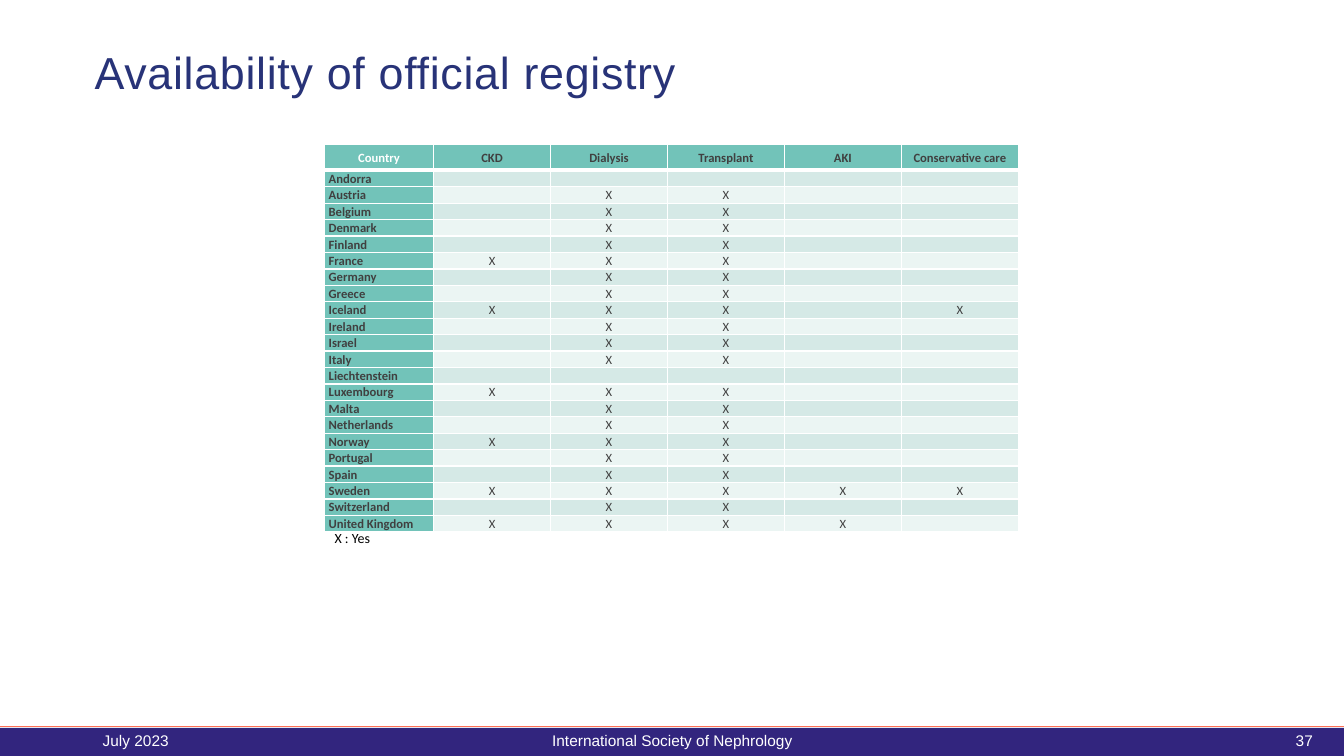
import pptx
import pptx.dml.color
import pptx.enum.shapes
import pptx.enum.text
import pptx.oxml.ns
import pptx.util
from lxml import etree

RGBColor = pptx.dml.color.RGBColor
Align = pptx.enum.text.PP_ALIGN
Anchor = pptx.enum.text.MSO_ANCHOR
Pt = pptx.util.Pt
qn = pptx.oxml.ns.qn

WHITE = RGBColor(0xFF, 0xFF, 0xFF)
BLACK = RGBColor(0x00, 0x00, 0x00)
CHARCOAL = RGBColor(0x40, 0x40, 0x40)
NAVY = RGBColor(0x28, 0x33, 0x78)
INDIGO = RGBColor(0x32, 0x25, 0x7E)
CORAL = RGBColor(0xFE, 0x70, 0x55)
TEAL = RGBColor(0x72, 0xC3, 0xB9)
BANDS = (RGBColor(0xD5, 0xE9, 0xE6), RGBColor(0xEB, 0xF5, 0xF3))

PAGE_WIDTH, PAGE_HEIGHT = 1333, 750
HEADER_HEIGHT, ROW_HEIGHT = 26, 16
COUNTRY_WIDTH, REGISTRY_WIDTH = 108, 116

REGISTRIES = ["CKD", "Dialysis", "Transplant", "AKI", "Conservative care"]
USUAL = ("Dialysis", "Transplant")
COUNTRIES = [
    "Andorra", "Austria", "Belgium", "Denmark", "Finland", "France", "Germany",
    "Greece", "Iceland", "Ireland", "Israel", "Italy", "Liechtenstein",
    "Luxembourg", "Malta", "Netherlands", "Norway", "Portugal", "Spain",
    "Sweden", "Switzerland", "United Kingdom",
]
# Countries whose registries differ from the usual pair
EXCEPTIONS = {
    "Andorra": (),
    "Liechtenstein": (),
    "France": ("CKD", *USUAL),
    "Iceland": ("CKD", *USUAL, "Conservative care"),
    "Luxembourg": ("CKD", *USUAL),
    "Norway": ("CKD", *USUAL),
    "Sweden": REGISTRIES,
    "United Kingdom": ("CKD", *USUAL, "AKI"),
}


def px(length):
    return pptx.util.Emu(length * 9144)


def add_text(page, box, text, size, font, color, align=Align.LEFT, anchor=Anchor.MIDDLE):
    frame = page.shapes.add_textbox(*map(px, box)).text_frame
    frame.word_wrap = True
    frame.vertical_anchor = anchor
    frame.text = text
    para = frame.paragraphs[0]
    para.alignment = align
    span = para.runs[0]
    span.font.size = Pt(size)
    span.font.name = font
    span.font.color.rgb = color
    return para


def add_title(page, box):
    para = add_text(page, box, "Availability of official registry", 32, "Arial", NAVY)
    para.line_spacing = 0.9
    para.runs[0].font._element.set("spc", "50")


def set_borders(cell, top, bottom):
    properties = cell._tc.get_or_add_tcPr()
    widths = {"lnL": 1, "lnR": 1, "lnT": top, "lnB": bottom}
    for position, (side, width) in enumerate(widths.items()):
        line = etree.Element(qn(f"a:{side}"), w=str(Pt(width)))
        fill = etree.SubElement(line, qn("a:solidFill"))
        etree.SubElement(fill, qn("a:srgbClr"), val=str(WHITE))
        properties.insert(position, line)


def fill_cell(cell, text, fill, color, bold, align):
    cell.fill.solid()
    cell.fill.fore_color.rgb = fill
    cell.vertical_anchor = Anchor.MIDDLE
    cell.margin_left = cell.margin_right = px(4)
    cell.margin_top = cell.margin_bottom = 0
    cell.text_frame.text = text
    para = cell.text_frame.paragraphs[0]
    para.alignment = align
    para.line_spacing = 1.07
    for span in para.runs:
        span.font.size = Pt(9)
        span.font.name = "Calibri"
        span.font.bold = bold
        span.font.color.rgb = color
    if not para.runs:
        # Keeps empty cells from stretching their row
        etree.SubElement(para._p, qn("a:endParaRPr"), sz="900")


def add_registry_table(page, box):
    rows = [["Country", *REGISTRIES]]
    for country in COUNTRIES:
        held = EXCEPTIONS.get(country, USUAL)
        rows.append([country, *("X" if name in held else "" for name in REGISTRIES)])

    table = page.shapes.add_table(len(rows), len(rows[0]), *map(px, box)).table
    table.first_row = table.horz_banding = False
    for index, column in enumerate(table.columns):
        column.width = px(REGISTRY_WIDTH if index else COUNTRY_WIDTH)
    for index, row in enumerate(table.rows):
        row.height = px(ROW_HEIGHT if index else HEADER_HEIGHT)

    for r, values in enumerate(rows):
        for c, value in enumerate(values):
            heading = r == 0 or c == 0
            fill_cell(
                table.cell(r, c), value,
                fill=TEAL if heading else BANDS[(r - 1) % 2],
                color=WHITE if r == c == 0 else CHARCOAL,
                bold=heading,
                align=Align.LEFT if r and c == 0 else Align.CENTER,
            )
            set_borders(table.cell(r, c), top=3 if r == 1 else 1, bottom=1 if r else 3)


def add_footer_band(page, box):
    left, top, width, height = box
    band = page.shapes.add_shape(
        pptx.enum.shapes.MSO_SHAPE.RECTANGLE, *map(px, box))
    band.shadow.inherit = False
    band.fill.solid()
    band.fill.fore_color.rgb = INDIGO
    band.line.fill.background()

    rule = page.shapes.add_connector(
        pptx.enum.shapes.MSO_CONNECTOR.STRAIGHT,
        px(left), px(top - 1), px(left + width), px(top - 1))
    rule.line.color.rgb = CORAL
    rule.line.width = Pt(0.75)
    etree.SubElement(rule._element.spPr, qn("a:effectLst"))


def add_footer_text(page, box):
    left, top, width, height = box
    for offset, span_width, text, align in (
        (0, 300, "July 2023", Align.LEFT),
        (350, 450, "International Society of Nephrology", Align.CENTER),
        (width - 370, 370, "37", Align.RIGHT),
    ):
        add_text(page, (left + offset, top, span_width, height), text, 11, "Arial",
                 WHITE, align)


def main():
    deck = pptx.Presentation()
    deck.slide_width, deck.slide_height = px(PAGE_WIDTH), px(PAGE_HEIGHT)
    page = deck.slides.add_slide(deck.slide_layouts[6])

    # Footer band
    add_footer_band(page, (0, 722, PAGE_WIDTH, 28))
    # Registry table and its key
    table_width = COUNTRY_WIDTH + REGISTRY_WIDTH * len(REGISTRIES)
    table_height = HEADER_HEIGHT + ROW_HEIGHT * len(COUNTRIES)
    add_registry_table(page, (322, 143, table_width, table_height))
    add_text(page, (322, 520, 75, 27), "X : Yes", 10, "Calibri", BLACK, anchor=Anchor.TOP)
    # Title and footer text
    add_title(page, (84, 39, 926, 71))
    add_footer_text(page, (92, 715, 1220, 40))

    deck.save("out.pptx")


if __name__ == "__main__":
    main()
